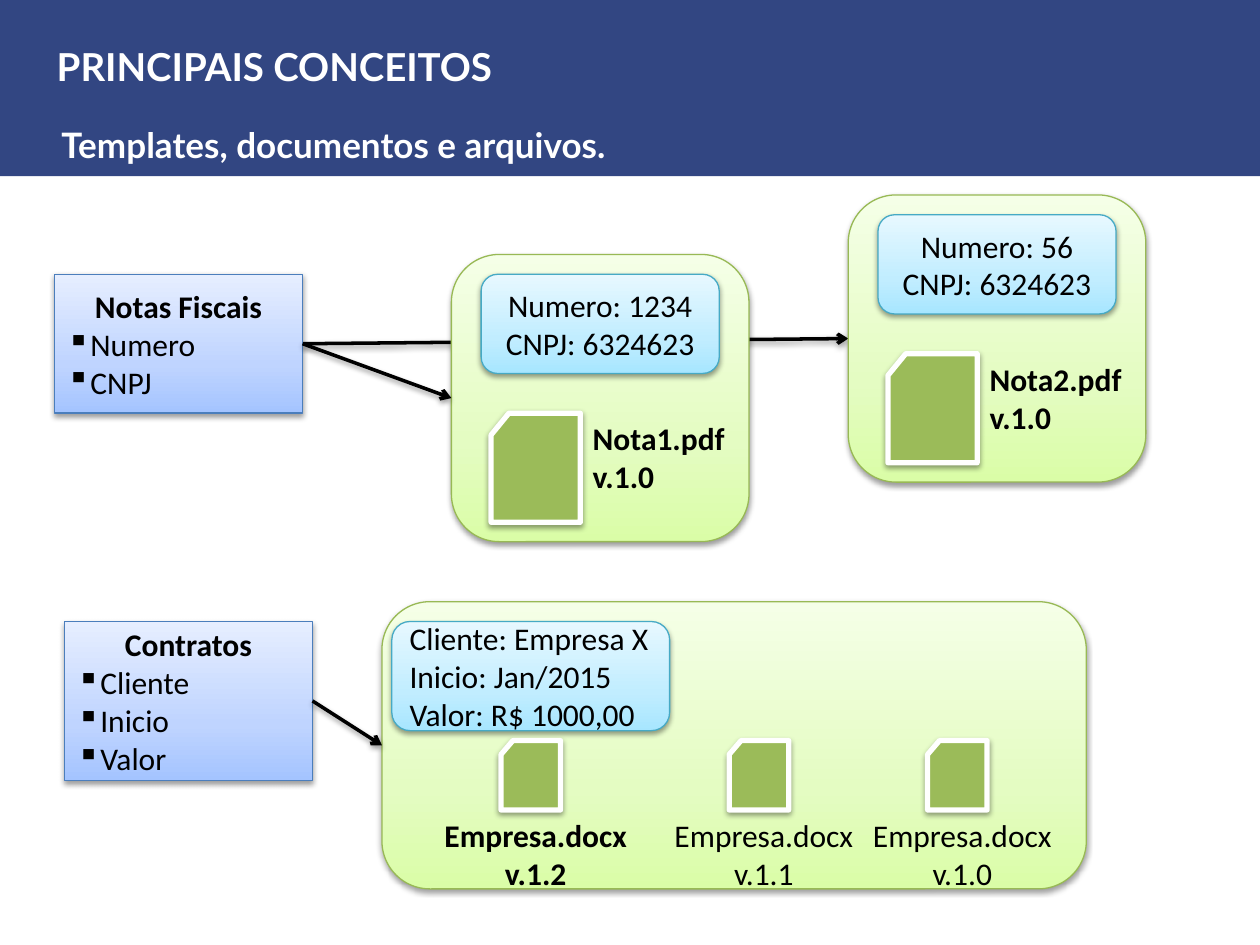
from dataclasses import dataclass
from lxml.etree import SubElement
from pptx import Presentation
from pptx.dml.color import RGBColor
from pptx.enum.shapes import MSO_CONNECTOR, MSO_SHAPE
from pptx.enum.text import MSO_ANCHOR, PP_ALIGN
from pptx.oxml.ns import qn
from pptx.util import Cm, Pt


@dataclass(frozen=True)
class Theme:
    navy: str = "324682"
    white: str = "FFFFFF"
    black: str = "000000"
    page: str = "9BBB59"
    blue: tuple = ("A4C4FF", "BFD4FF", "E6EEFF")
    green: tuple = ("DAFDA7", "E4FCC2", "F5FFE7")
    aqua: tuple = ("A7E6FF", "C1EDFF", "E7F8FF")
    edges: tuple = ("4B7EBC", "98B955", "46AAC5")
    head: str = "Lato"
    body: str = "Calibri"
    title: int = 22
    sub: int = 20
    text: int = 18


T = Theme()


def node(top, tag, **attrs):
    return SubElement(top, qn("a:" + tag), attrs)


def shade(shape):
    effect = node(shape._element.spPr, "effectLst")
    cast = node(effect, "outerShdw", blurRad="40000", dist="20000",
                dir="5400000", rotWithShape="0")
    node(node(cast, "srgbClr", val=T.black), "alpha", val="38000")


def blend(shape, tones):
    shape.fill.gradient()
    grad = shape._element.spPr.find(qn("a:gradFill"))
    for child in list(grad):
        grad.remove(child)
    stops = node(grad, "gsLst")
    for pos, tone in zip((0, 35000, 100000), tones):
        node(node(stops, "gs", pos=str(pos)), "srgbClr", val=tone)
    node(grad, "lin", ang="16200000", scaled="0")


def write(shape, lines, size=T.text, bold=False, color=T.black, font=T.body,
          align=PP_ALIGN.LEFT, anchor=MSO_ANCHOR.MIDDLE, bullet=None, lead=None):
    frame = shape.text_frame
    frame.word_wrap = True
    frame.vertical_anchor = anchor
    for line in lines:
        para = frame.paragraphs[0] if not frame.text else frame.add_paragraph()
        para.alignment = align
        if lead:
            para.line_spacing = Pt(lead)
        if bullet:
            node(para._p.get_or_add_pPr(), "buChar", char=bullet)
        run = para.add_run()
        run.text = line
        run.font.size, run.font.bold, run.font.name = Pt(size), bold, font
        run.font.color.rgb = RGBColor.from_string(color)


def block(shapes, kind, left, top, width, height, fill, edge=None, thick=0.75):
    shape = shapes.add_shape(kind, Cm(left), Cm(top), Cm(width), Cm(height))
    if isinstance(fill, tuple):
        blend(shape, fill)
    else:
        shape.fill.solid()
        shape.fill.fore_color.rgb = RGBColor.from_string(fill)
    if edge:
        shape.line.color.rgb = RGBColor.from_string(edge)
        shape.line.width = Pt(thick)
        shade(shape)
    else:
        shape.line.fill.background()
        shape.shadow.inherit = False
    return shape


def label(shapes, left, top, width, height, lines, **form):
    box = shapes.add_textbox(Cm(left), Cm(top), Cm(width), Cm(height))
    write(box, lines, anchor=MSO_ANCHOR.TOP, **form)


def panel(shapes, left, top, width, height):
    return block(shapes, MSO_SHAPE.ROUNDED_RECTANGLE, left, top, width, height,
                 T.green, T.edges[1])


def chip(shapes, left, top, width, height, lines, align):
    shape = block(shapes, MSO_SHAPE.ROUNDED_RECTANGLE, left, top, width, height,
                  T.aqua, T.edges[2])
    write(shape, lines, align=align)


def sheet(shapes, left, top, width, height):
    block(shapes, MSO_SHAPE.FLOWCHART_CARD, left, top, width, height,
          T.page, T.white, 3)


def header(slide, width, height):
    band = block(slide.shapes, MSO_SHAPE.RECTANGLE, 0, 0, width, height, T.navy)
    slide.shapes._spTree.insert(2, band._element)
    title = slide.shapes.title
    title.left, title.top = Cm(0.89), Cm(0.74)
    title.width, title.height = Cm(20.83), Cm(1.19)
    look = dict(bold=True, color=T.white, font=T.head)
    write(title, ["PRINCIPAIS CONCEITOS"], size=T.title, **look)
    label(slide.shapes, 0.99, 1.98, 16.87, 1.35,
          ["Templates, documentos e arquivos."], size=T.sub, lead=35, **look)


def model(shapes, left, top, width, height, name, fields):
    shape = block(shapes, MSO_SHAPE.RECTANGLE, left, top, width, height,
                  T.blue, T.edges[0])
    write(shape, [name], bold=True, align=PP_ALIGN.CENTER)
    write(shape, fields, bullet="▪")
    return shape


def note(slide, left, top, number, name):
    shapes = slide.shapes.add_group_shape().shapes
    card = panel(shapes, left, top, 6, 5.79)
    chip(shapes, left + 0.6, top + 0.4, 4.8, 2,
         [f"Numero: {number}", "CNPJ: 6324623"], PP_ALIGN.CENTER)
    sheet(shapes, left + 0.8, top + 3.2, 1.8, 2.2)
    label(shapes, left + 2.6, top + 3.2, 3.2, 1.8, [name, "v.1.0"], bold=True)
    return card


def deal(slide, left, top, width, height):
    shapes = slide.shapes
    card = panel(shapes, left, top, width, height)
    chip(shapes, left + 0.2, top + 0.4, 5.6, 2.2,
         ["Cliente: Empresa X", "Inicio: Jan/2015", "Valor: R$ 1000,00"],
         PP_ALIGN.LEFT)
    for shift, issue in ((0.8, "v.1.2"), (5.4, "v.1.1"), (9.4, "v.1.0")):
        sheet(shapes, left + shift + 1.6, top + 2.8, 1.2, 1.4)
        label(shapes, left + shift, top + 4.2, 4.6, 1.8,
              ["Empresa.docx", issue], bold=issue == "v.1.2",
              align=PP_ALIGN.CENTER)
    return card


def link(slide, start, end, behind=False):
    line = slide.shapes.add_connector(MSO_CONNECTOR.STRAIGHT, 0, 0, 0, 0)
    line.begin_connect(start, 3)
    line.end_connect(end, 1)
    line.line.color.rgb = RGBColor.from_string(T.black)
    line.line.width = Pt(2)
    node(line._element.spPr.find(qn("a:ln")), "tailEnd", type="arrow")
    shade(line)
    if behind:
        slide.shapes._spTree.insert(2, line._element)


def main():
    deck = Presentation()
    deck.slide_width, deck.slide_height = Cm(25.4), Cm(19.05)
    slide = deck.slides.add_slide(deck.slide_layouts[5])
    header(slide, 25.4, 3.55)
    bill = model(slide.shapes, 1.1, 5.53, 5, 2.8, "Notas Fiscais",
                 ["Numero", "CNPJ"])
    first = note(slide, 9.1, 5.13, "1234", "Nota1.pdf")
    other = note(slide, 17.1, 3.93, "56", "Nota2.pdf")
    pact = model(slide.shapes, 1.3, 12.53, 5, 3.2, "Contratos",
                 ["Cliente", "Inicio", "Valor"])
    firm = deal(slide, 7.7, 12.13, 14.2, 5.79)
    link(slide, bill, other, behind=True)
    link(slide, bill, first)
    link(slide, pact, firm)
    deck.save("out.pptx")


if __name__ == "__main__":
    main()
